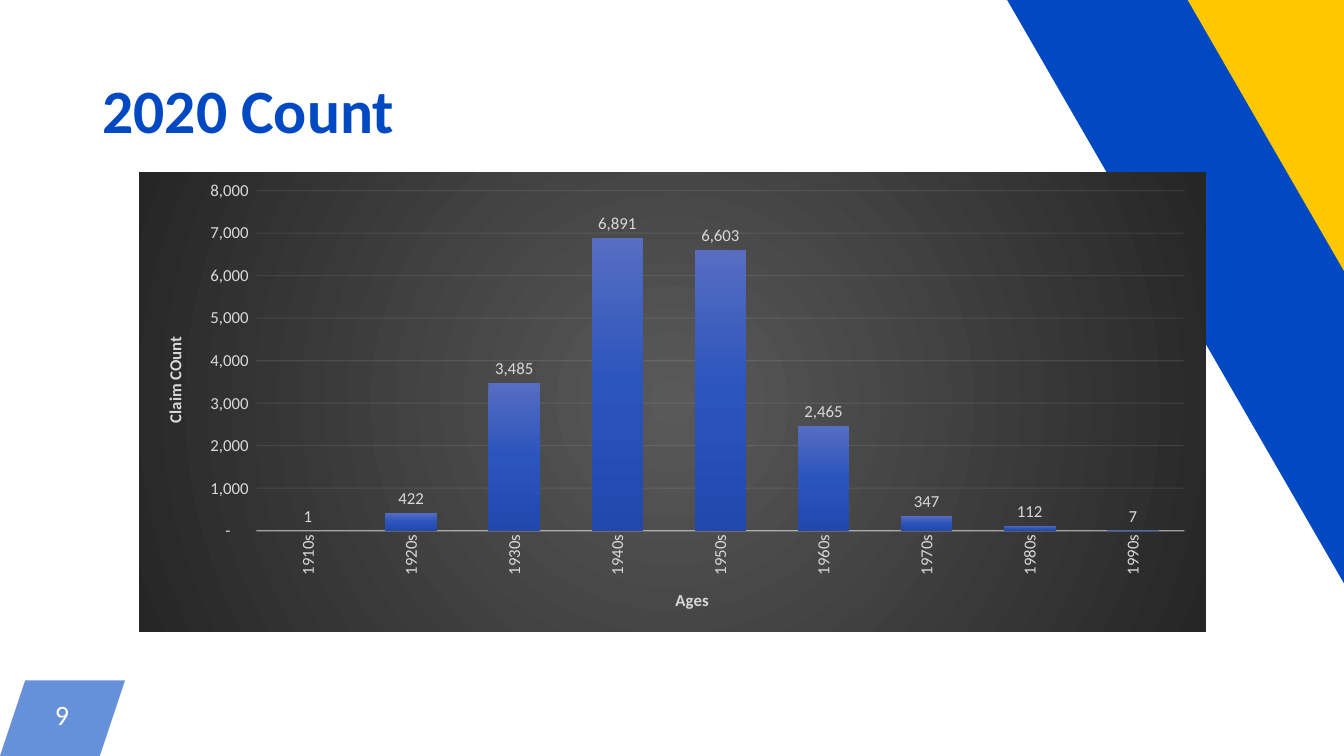
"""Build the 2020 count slide: title, corner bands, page tab and column chart."""
import lxml.etree
import pptx
import pptx.chart.data
import pptx.dml.color
import pptx.enum.chart
import pptx.enum.text
import pptx.oxml
import pptx.oxml.ns
import pptx.util
from pptx.util import Inches

RGB = pptx.dml.color.RGBColor.from_string
Pt = pptx.util.Pt
ENUM = pptx.enum.chart
ALIGN = pptx.enum.text.PP_ALIGN
MID = pptx.enum.text.MSO_ANCHOR.MIDDLE
qn = pptx.oxml.ns.qn

THEME = {
    "blue": "0049C2", "gold": "FFC700", "white": "FFFFFF",
    "pale": "D9D9D9", "rule": "F2F2F2",
    "bars": [(0, "566DC1"), (50, "2C54BD"), (100, "2248AD")],
    "back": [(0, "595959"), (100, "262626")],
    "font": "Calibri", "head": Pt(44), "page": Pt(20), "small": Pt(12),
}
COUNT = '_(* #,##0_);_(* \\(#,##0\\);_(* "-"??_);_(@_)'


def style(font, size, tint, bold=False):
    """Give a font its face, size, weight and colour."""
    for key, val in {"name": THEME["font"], "size": size, "bold": bold}.items():
        setattr(font, key, val)
    font.color.rgb = RGB(THEME[tint])


def blend(stops, tail):
    """Return a gradient fill element."""
    marks = "".join(f'<a:gs pos="{pos * 1000}"><a:srgbClr val="{tint}"/></a:gs>'
                    for pos, tint in stops)
    return pptx.oxml.parse_xml(f'<a:gradFill {pptx.oxml.ns.nsdecls("a")}>'
                               f'<a:gsLst>{marks}</a:gsLst>{tail}</a:gradFill>')


deck = pptx.Presentation()
deck.slide_width, deck.slide_height = Inches(13.33), Inches(7.5)
slide = deck.slides.add_slide(deck.slide_layouts[6])

bands = [
    ("blue", 60, [(0.25, 6.75), (1.24, 6.75), (0.99, 7.5), (0, 7.5)]),
    ("gold", 100, [(10.47, -2.17), (12.18, -3.15), (17.06, 5.36), (15.35, 6.33)]),
    ("blue", 100, [(9.47, -0.9), (10.81, -1.68), (15.71, 6.82), (14.37, 7.59)]),
]
for tint, alpha, spots in bands:
    spots = [(Inches(x), Inches(y)) for x, y in spots]
    pen = slide.shapes.build_freeform(*spots[0], scale=1)
    pen.add_line_segments(spots[1:], close=True)
    band = pen.convert_to_shape()
    band.shadow.inherit = False
    band.fill.solid()
    band.fill.fore_color.rgb = RGB(THEME[tint])
    band.line.fill.background()
    if alpha < 100:
        tone = band.fill._xPr.find(".//" + qn("a:srgbClr"))
        lxml.etree.SubElement(tone, qn("a:alpha"), val=str(alpha * 1000))

texts = [
    ("9", (0.25, 6.75, 0.73, 0.75), 0.04, ALIGN.CENTER, Pt(17.7), "page", "white", False),
    ("2020 Count", (0.92, 0.4, 11.5, 1.45), 0.1, ALIGN.LEFT, 0.9, "head", "blue", True),
]
for words, place, inset, align, lead, size, tint, bold in texts:
    frame = slide.shapes.add_textbox(*map(Inches, place)).text_frame
    form = {"word_wrap": True, "vertical_anchor": MID,
            "margin_left": Inches(inset), "margin_right": Inches(inset),
            "margin_top": Inches(0.04), "margin_bottom": Inches(0.04)}
    for key, val in form.items():
        setattr(frame, key, val)
    para = frame.paragraphs[0]
    para.alignment, para.line_spacing = align, lead
    run = para.add_run()
    run.text = words
    style(run.font, THEME[size], tint, bold)

data = pptx.chart.data.CategoryChartData()
data.categories = [f"{year}s" for year in range(1910, 2000, 10)]
data.add_series("Series 1", [1, 422, 3485, 6891, 6603, 2465, 347, 112, 7])
chart = slide.shapes.add_chart(
    ENUM.XL_CHART_TYPE.COLUMN_CLUSTERED,
    *map(Inches, (1.38, 1.71, 10.58, 4.56)), data).chart
chart.has_legend = chart.has_title = False
style(chart.font, THEME["small"], "pale")
root = chart.element

plot = chart.plots[0]
plot.gap_width, plot.overlap, plot.vary_by_categories = 100, -24, False
plot.has_data_labels = True
form = {"show_value": True, "number_format": COUNT, "number_format_is_linked": False,
        "position": ENUM.XL_LABEL_POSITION.OUTSIDE_END}
for key, val in form.items():
    setattr(plot.data_labels, key, val)
style(plot.data_labels.font, THEME["small"], "pale")
bars = root.xpath(".//c:ser")[0].get_or_add_spPr()
bars.insert(0, blend(THEME["bars"], '<a:lin ang="5400000" scaled="0"/>'))

years, claims = chart.category_axis, chart.value_axis
for axis, words in ((years, "Ages"), (claims, "Claim COunt")):
    axis.major_tick_mark = axis.minor_tick_mark = ENUM.XL_TICK_MARK.NONE
    style(axis.tick_labels.font, THEME["small"], "pale")
    para = axis.axis_title.text_frame.paragraphs[0]
    run = para.add_run()
    run.text = words
    style(run.font, THEME["small"], "pale", True)
form = {"minimum_scale": 0, "maximum_scale": 8000, "major_unit": 1000,
        "has_major_gridlines": True}
for key, val in form.items():
    setattr(claims, key, val)
claims.tick_labels.number_format = COUNT
claims.tick_labels.number_format_is_linked = False
claims.format.line.fill.background()

rules = [
    (years.format.line, 1, 54, ".//c:catAx/c:spPr"),
    (claims.major_gridlines.format.line, 0.75, 10, ".//c:majorGridlines"),
]
for line, width, alpha, where in rules:
    line.width = Pt(width)
    line.color.rgb = RGB(THEME["rule"])
    tone = root.xpath(where + "//a:srgbClr")[0]
    lxml.etree.SubElement(tone, qn("a:alpha"), val=str(alpha * 1000))

for body in root.xpath(".//c:catAx/c:txPr/a:bodyPr | .//c:valAx/c:title//a:bodyPr"):
    body.set("rot", "-5400000")
    body.set("vert", "horz")

spots = [
    (".//c:plotArea", 0, {"layoutTarget": "inner", "xMode": "edge", "yMode": "edge",
                          "x": 0.11, "y": 0.04, "w": 0.87, "h": 0.74}),
    (".//c:catAx/c:title", 1, {"xMode": "edge", "yMode": "edge", "x": 0.5, "y": 0.9}),
    (".//c:valAx/c:title", 1, {"xMode": "edge", "yMode": "edge", "x": 0.02, "y": 0.35}),
]
for where, slot, parts in spots:
    part = root.xpath(where)[0]
    for old in part.findall(qn("c:layout")):
        part.remove(old)
    grid = lxml.etree.Element(qn("c:layout"))
    hand = lxml.etree.SubElement(grid, qn("c:manualLayout"))
    for key, val in parts.items():
        lxml.etree.SubElement(hand, qn("c:" + key), val=str(val))
    part.insert(slot, grid)

back = lxml.etree.Element(qn("c:spPr"))
back.append(blend(THEME["back"], '<a:path path="circle"><a:fillToRect l="50000" '
                  't="50000" r="50000" b="50000"/></a:path>'))
edge = lxml.etree.SubElement(back, qn("a:ln"))
lxml.etree.SubElement(edge, qn("a:noFill"))
root.find(qn("c:chart")).addnext(back)

deck.save("out.pptx")
